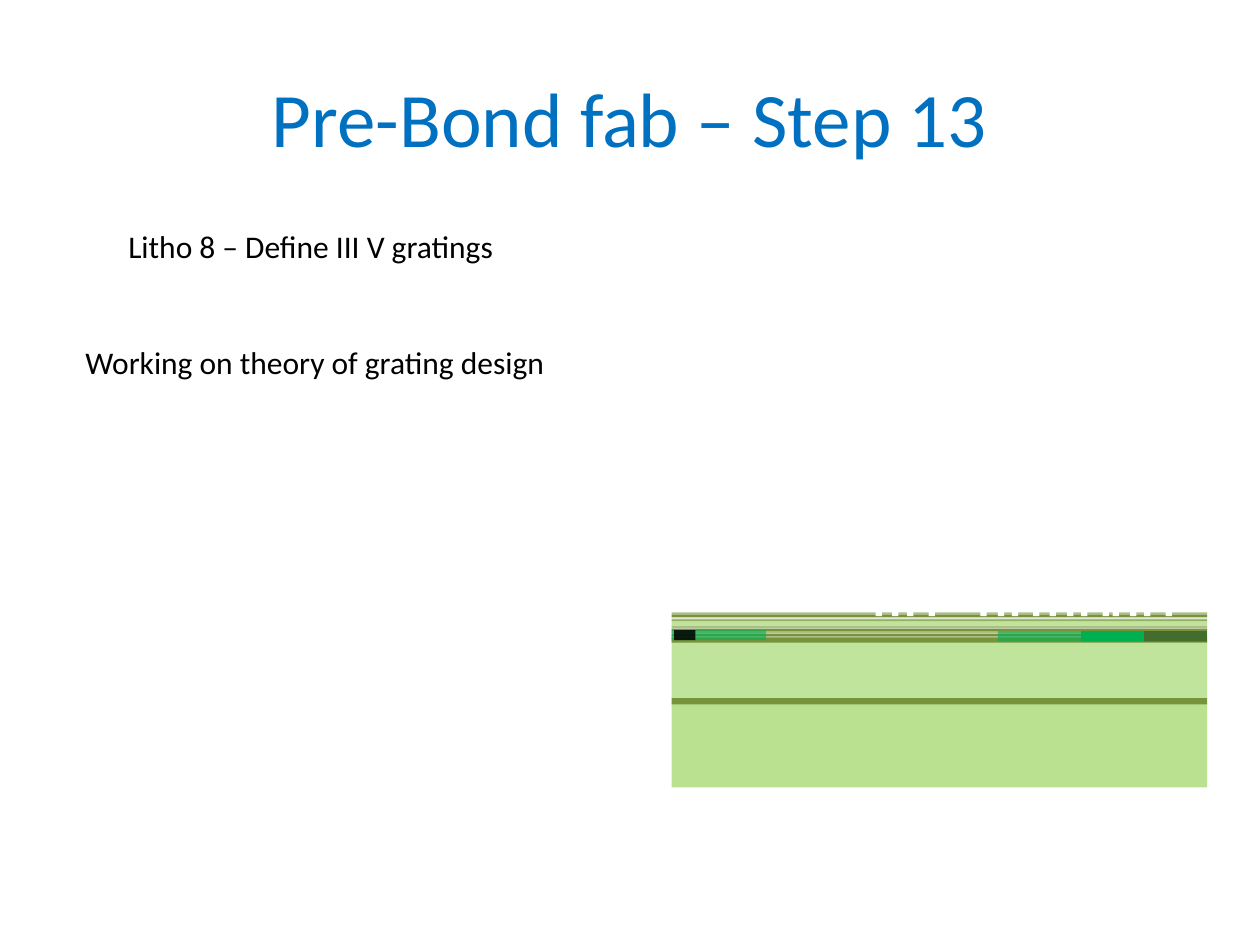
from pptx import Presentation
from pptx.dml.color import RGBColor
from pptx.enum import shapes, text
from pptx.oxml.ns import qn
from pptx.util import Inches, Pt
from lxml import etree

# Content
TITLE = "Pre-Bond fab – Step 13"
NOTES = [  # text, left, top, width
    ("Litho 8 – Define III V gratings", 0.92, 1.75, 8.83),
    ("Working on theory of grating design", 0.58, 2.67, 4.25),
]

# Theme: colours are (hex, opacity in percent)
THEME = {
    "font": "Calibri", "head": 44, "body": 18,
    "blue": "0070C0", "ink": "000000",
    "base": ("92D050", 63), "clad": ("92D050", 56),
    "dark": ("77933C", 100), "pale": ("77933C", 60),
    "mesa": ("00B050", 60), "gain": ("00B050", 100),
    "black": ("000000", 85), "moss": ("4F6228", 85),
    "gap": ("FFFFFF", 100),
}

# Wafer stack, spanning the full width: colour, top, height
LEFT, RIGHT = 5.33, 9.58
FILM = 0.02
LAYERS = [
    ("base", 5.58, 0.67), ("clad", 5.08, 0.46), ("dark", 5.54, 0.05),
    ("dark", 5.08, FILM), ("dark", 5.06, FILM), ("pale", 5.05, FILM),
    ("dark", 5.03, FILM), ("pale", 5.01, FILM), ("dark", 4.99, FILM),
    ("pale", 4.97, FILM), ("clad", 4.92, 0.05), ("pale", 4.91, FILM),
    ("dark", 4.88, FILM), ("pale", 4.86, FILM),
]

# Regions inside the stack: colour, left, right, top
DEPTH = 0.08
LEFT_PARTS = [("mesa", LEFT, 6.08, 5), ("black", 5.35, 5.52, 5)]
RIGHT_PARTS = [("mesa", 7.92, RIGHT, 5.01), ("gain", 8.58, RIGHT, 5.01),
               ("moss", 9.08, RIGHT, 5.01)]

# Grating slits: left edges
SLITS = [6.95, 7.08, 7.2, 7.37, 7.78, 7.92, 8.03, 8.2,
         8.33, 8.47, 8.58, 8.75, 8.83, 8.97, 9.08, 9.25]
SLIT_TOP, SLIT_WIDE, SLIT_HIGH = 4.56, 0.05, 0.33


def style(para, size, color):
    para.font.name = THEME["font"]
    para.font.size = Pt(size)
    para.font.color.rgb = RGBColor.from_string(color)


def block(slide, key, left, top, width, height):
    color, alpha = THEME[key]
    box = slide.shapes.add_shape(
        shapes.MSO_SHAPE.RECTANGLE,
        Inches(left), Inches(top), Inches(width), Inches(height))
    box.shadow.inherit = False
    box.line.fill.background()
    box.fill.solid()
    box.fill.fore_color.rgb = RGBColor.from_string(color)
    if alpha < 100:
        tint = box.fill._xPr.find(".//" + qn("a:srgbClr"))
        etree.SubElement(tint, qn("a:alpha"), val=str(alpha * 1000))


def main():
    deck = Presentation()
    deck.slide_width, deck.slide_height = Inches(10), Inches(7.5)
    slide = deck.slides.add_slide(deck.slide_layouts[5])

    # Title
    head = slide.shapes.title
    head.left, head.top = Inches(0.5), Inches(0.3)
    head.width, head.height = Inches(9), Inches(1.25)
    head.text_frame.text = TITLE
    head.text_frame.vertical_anchor = text.MSO_ANCHOR.MIDDLE
    para = head.text_frame.paragraphs[0]
    para.alignment = text.PP_ALIGN.CENTER
    style(para, THEME["head"], THEME["blue"])

    # Notes
    for words, left, top, width in NOTES:
        note = slide.shapes.add_textbox(
            Inches(left), Inches(top), Inches(width), Inches(0.4))
        frame = note.text_frame
        frame.word_wrap = True
        frame.auto_size = text.MSO_AUTO_SIZE.SHAPE_TO_FIT_TEXT
        frame.text = words
        style(frame.paragraphs[0], THEME["body"], THEME["ink"])

    # Wafer cross-section, back to front
    for key, top, height in LAYERS:
        block(slide, key, LEFT, top, RIGHT - LEFT, height)
    for key, left, right, top in LEFT_PARTS:
        block(slide, key, left, top, right - left, DEPTH)
    for left in SLITS:
        block(slide, "gap", left, SLIT_TOP, SLIT_WIDE, SLIT_HIGH)
    for key, left, right, top in RIGHT_PARTS:
        block(slide, key, left, top, right - left, DEPTH)

    deck.save("out.pptx")


if __name__ == "__main__":
    main()
